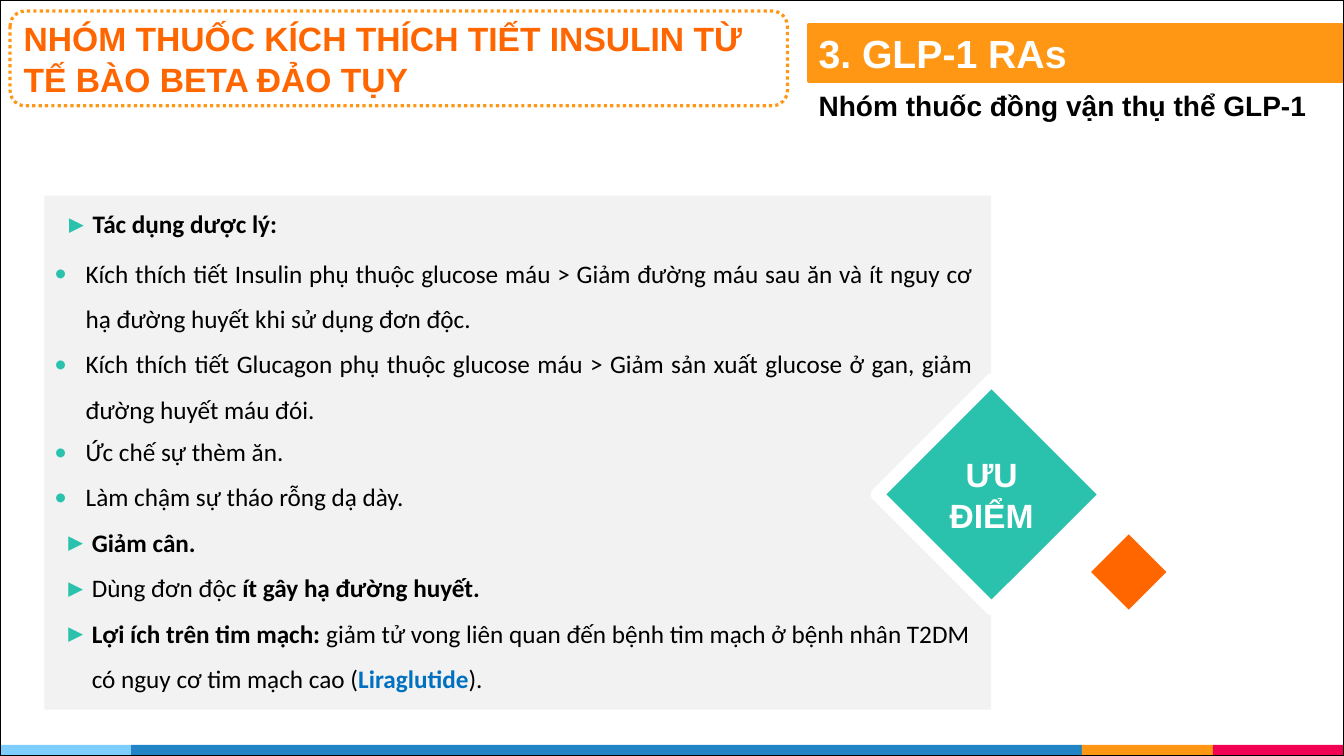
from pptx import Presentation
from pptx.dml.color import RGBColor
from pptx.enum.dml import MSO_LINE
from pptx.enum.shapes import MSO_SHAPE
from pptx.enum.text import MSO_ANCHOR, PP_ALIGN
from pptx.oxml.ns import qn
from pptx.util import Inches, Pt
from lxml import etree

RECT, ROUND, DIAMOND = MSO_SHAPE.RECTANGLE, MSO_SHAPE.ROUNDED_RECTANGLE, MSO_SHAPE.DIAMOND
TOP, MIDDLE = MSO_ANCHOR.TOP, MSO_ANCHOR.MIDDLE
LEFT, CENTER, JUSTIFY = PP_ALIGN.LEFT, PP_ALIGN.CENTER, PP_ALIGN.JUSTIFY
DOTTED = MSO_LINE.ROUND_DOT

ORANGE, DEEP_ORANGE, TEAL, BLUE = "FF9715", "FF6600", "2AC2AC", "0070C0"
WHITE, BLACK, PANEL = "FFFFFF", "000000", "F2F2F2"
HANG = 0.31
LINE_PITCH = Pt(32.4)


def rgb(value):
    return RGBColor.from_string(value)


class Deck:
    heading_font, body_font, arrow_font = "Arial", "Calibri", "Noto Sans Mono"
    body_size = 18

    def __init__(self, width, height):
        self.prs = Presentation()
        self.prs.slide_width, self.prs.slide_height = Inches(width), Inches(height)
        self.s = self.prs.slides.add_slide(self.prs.slide_layouts[6])

    def shape(self, kind, x, y, w, h, fill=None, line=None, weight=1):
        sp = self.s.shapes.add_shape(kind, Inches(x), Inches(y), Inches(w), Inches(h))
        sp.shadow.inherit = False
        if fill:
            sp.fill.solid()
            sp.fill.fore_color.rgb = rgb(fill)
        else:
            sp.fill.background()
        if line:
            sp.line.color.rgb = rgb(line)
            sp.line.width = Pt(weight)
        else:
            sp.line.fill.background()
        return sp

    def textbox(self, x, y, w, h):
        return self.s.shapes.add_textbox(Inches(x), Inches(y), Inches(w), Inches(h))

    def frame(self, sp, left=0, top=0, right=0, anchor=TOP):
        tf = sp.text_frame
        tf.word_wrap = True
        tf.vertical_anchor = anchor
        tf.margin_left, tf.margin_top = Inches(left), Inches(top)
        tf.margin_right, tf.margin_bottom = Inches(right), 0
        return tf

    def heading(self, sp, text, size, color, align=LEFT, **margins):
        tf = self.frame(sp, **margins)
        tf.text = text
        for p in tf.paragraphs:
            p.alignment = align
            for r in p.runs:
                self.font(r, self.heading_font, size, color, True)

    def font(self, r, name, size, color, bold):
        r.font.name, r.font.size, r.font.bold = name, Pt(size), bold
        r.font.color.rgb = rgb(color)

    def bullet(self, p, char, margin):
        pPr = p._p.get_or_add_pPr()
        pPr.set("marL", str(Inches(margin)))
        pPr.set("indent", str(-Inches(HANG)))
        clr = etree.SubElement(pPr, qn("a:buClr"))
        etree.SubElement(clr, qn("a:srgbClr")).set("val", TEAL)
        font = self.arrow_font if char == "▶" else self.body_font
        etree.SubElement(pPr, qn("a:buFont")).set("typeface", font)
        etree.SubElement(pPr, qn("a:buChar")).set("char", char)

    def bullets(self, sp, items, top, align=LEFT):
        """Each item: bullet, text margin, line spacing, space before, runs."""
        tf = self.frame(sp, top=top)
        for i, (char, margin, spacing, before, runs) in enumerate(items):
            p = tf.paragraphs[0] if i == 0 else tf.add_paragraph()
            p.alignment = align
            p.line_spacing, p.space_before = spacing, Pt(before)
            self.bullet(p, char, margin)
            for text, bold, color in runs:
                r = p.add_run()
                r.text = text
                self.font(r, self.body_font, self.body_size, color, bold)


def plain(text):
    return text, False, BLACK


def strong(text, color=BLACK):
    return text, True, color


def main():
    d = Deck(13.33, 7.5)

    # Footer strip
    x = 0
    for width, color in ((1.3, "7ECEFD"), (9.43, "2185C5"), (1.3, ORANGE), (1.3, "F20253")):
        d.shape(RECT, x, 7.39, width, 0.11, color)
        x += width

    # Title and section header
    title = d.shape(ROUND, 0.1, 0.11, 7.71, 0.94, line=ORANGE, weight=2.28)
    title.adjustments[0] = 0.16
    title.line.dash_style = DOTTED
    d.heading(title, "NHÓM THUỐC KÍCH THÍCH TIẾT INSULIN TỪ TẾ BÀO BETA ĐẢO TỤY",
              24, DEEP_ORANGE, left=0.09, right=0.38, anchor=MIDDLE)
    section = d.shape(RECT, 8.02, 0.24, 5.31, 0.57, ORANGE, ORANGE, 2.04)
    d.heading(section, "3. GLP-1 RAs", 28, WHITE, left=0.1, anchor=MIDDLE)
    d.heading(d.textbox(8.11, 0.85, 5.0, 0.36), "Nhóm thuốc đồng vận thụ thể GLP-1",
              20, BLACK, left=0.01, top=0.03)

    # Advantages panel
    d.shape(RECT, 0.44, 1.94, 9.39, 5.1, PANEL)
    d.bullets(d.textbox(0.52, 1.91, 9.13, 2.28), [
        ("▶", 0.4, 1.0, 0, [strong("Tác dụng dược lý:")]),
        ("•", 0.33, LINE_PITCH, 2.9, [plain(
            "Kích thích tiết Insulin phụ thuộc glucose máu > Giảm đường máu sau ăn "
            "và ít nguy cơ hạ đường huyết khi sử dụng đơn độc.")]),
        ("•", 0.33, LINE_PITCH, 0, [plain(
            "Kích thích tiết Glucagon phụ thuộc glucose máu > Giảm sản xuất glucose "
            "ở gan, giảm đường huyết máu đói.")]),
    ], top=0.16, align=JUSTIFY)
    lower = [
        ("•", 0.31, [plain("Ức chế sự thèm ăn.")]),
        ("•", 0.31, [plain("Làm chậm sự tháo rỗng dạ dày.")]),
        ("▶", 0.37, [strong("Giảm cân.")]),
        ("▶", 0.37, [plain("Dùng đơn độc "), strong("ít gây hạ đường huyết.")]),
        ("▶", 0.37, [
            strong("Lợi ích trên tim mạch: "),
            plain("giảm tử vong liên quan đến bệnh tim mạch ở bệnh nhân T2DM "
                  "có nguy cơ tim mạch cao ("),
            strong("Liraglutide", BLUE), plain(").")]),
    ]
    d.bullets(d.textbox(0.54, 4.16, 9.21, 2.73),
              [(char, margin, LINE_PITCH, 0, runs) for char, margin, runs in lower], top=0.02)

    # Diamonds
    badge = d.shape(DIAMOND, 8.7, 3.77, 2.27, 2.27, TEAL, WHITE, 9.25)
    d.heading(badge, "ƯU\nĐIỂM", 24, WHITE, CENTER, anchor=MIDDLE)
    d.shape(DIAMOND, 10.67, 5.15, 1.05, 1.05, DEEP_ORANGE, WHITE, 15.25)

    # Slide border
    d.shape(RECT, 0, 0, 13.33, 7.5, line=BLACK, weight=1.92)
    d.prs.save("out.pptx")


if __name__ == "__main__":
    main()
